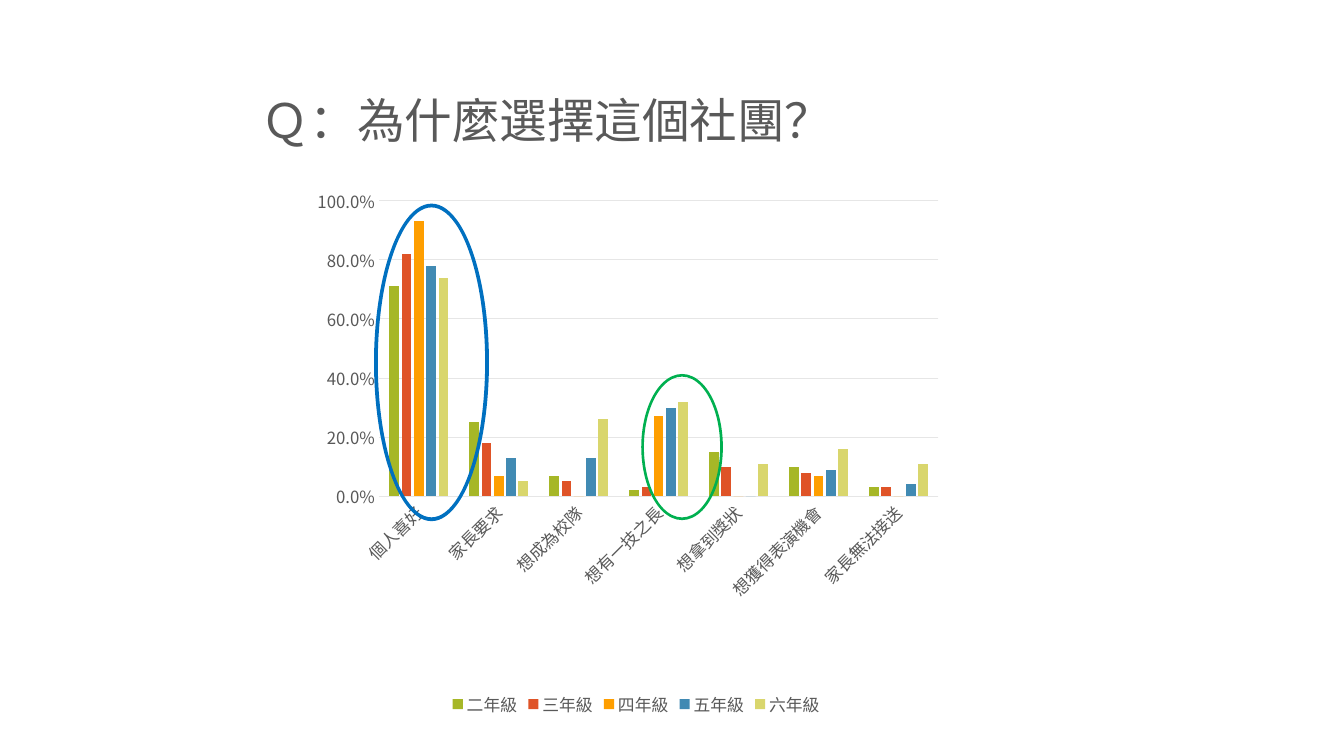
from lxml.etree import SubElement
from pptx import Presentation
from pptx.chart.data import CategoryChartData
from pptx.dml.color import RGBColor
from pptx.enum.chart import XL_CHART_TYPE as ChartType, XL_LEGEND_POSITION as LegendPosition
from pptx.enum.chart import XL_TICK_MARK as TickMark
from pptx.enum.shapes import MSO_SHAPE as Shape
from pptx.enum.text import MSO_ANCHOR as Anchor
from pptx.oxml.ns import qn
from pptx.util import Inches, Pt

COLORS = {
    "text": "595959", "grid": "E6E6E6", "blue": "0070C0", "green": "00B050",
    "二年級": "A6B727", "三年級": "DF5327", "四年級": "FE9E00",
    "五年級": "418AB3", "六年級": "D9D66D",
}
CATEGORIES = ["個人喜好", "家長要求", "想成為校隊", "想有一技之長",
              "想拿到獎狀", "想獲得表演機會", "家長無法接送"]
GRADES = {
    "二年級": [0.71, 0.25, 0.07, 0.02, 0.15, 0.1, 0.03],
    "三年級": [0.82, 0.18, 0.05, 0.03, 0.1, 0.08, 0.03],
    "四年級": [0.93, 0.07, 0, 0.27, 0, 0.07, 0],
    "五年級": [0.78, 0.13, 0.13, 0.3, 0, 0.09, 0.04],
    "六年級": [0.74, 0.05, 0.26, 0.32, 0.11, 0.16, 0.11],
}
PLOT_LAYOUT = {"layoutTarget": "inner", "xMode": "edge", "yMode": "edge",
               "x": 0.1, "y": 0.05, "w": 0.87, "h": 0.54}


class SlideBuilder:
    """Holds the style and the current slide, and adds each kind of element."""

    typeface = "Noto Sans CJK SC"

    def __init__(self, slide):
        self.slide = slide

    def color(self, name):
        return RGBColor.from_string(COLORS[name])

    def apply(self, target, values):
        for name, value in values.items():
            setattr(target, name, value)

    def style_font(self, font, size):
        self.apply(font, {"size": Pt(size), "bold": False, "name": self.typeface})
        font.fill.solid()
        font.fill.fore_color.rgb = self.color("text")

    def set_east_asian(self, element):
        for latin in element.findall(".//" + qn("a:latin")):
            east_asian = latin.makeelement(qn("a:ea"), {"typeface": self.typeface})
            latin.addnext(east_asian)

    def style_line(self, line):
        line.width = Pt(0.75)
        line.color.rgb = self.color("grid")

    def title(self, text, box):
        shape = self.slide.shapes.add_textbox(*map(Inches, box))
        frame = shape.text_frame
        self.apply(frame, {"word_wrap": True, "vertical_anchor": Anchor.BOTTOM})
        paragraph = frame.paragraphs[0]
        paragraph.line_spacing = 0.9
        run = paragraph.add_run()
        run.text = text
        self.style_font(run.font, 34)
        self.set_east_asian(shape.element)

    def column_chart(self, categories, grades, box):
        data = CategoryChartData(number_format="0.0%")
        data.categories = categories
        for grade, values in grades.items():
            data.add_series(grade, values)
        chart = self.slide.shapes.add_chart(
            ChartType.COLUMN_CLUSTERED, *map(Inches, box), data).chart
        self.apply(chart, {"has_title": False, "has_legend": True})
        self.apply(chart.legend, {"position": LegendPosition.BOTTOM, "include_in_layout": False})
        plot = chart.plots[0]
        self.apply(plot, {"gap_width": 219, "overlap": -27, "vary_by_categories": False})
        for series in plot.series:
            series.format.fill.solid()
            series.format.fill.fore_color.rgb = self.color(series.name)
        self.axes(chart)
        for owner in (chart, chart.legend, chart.category_axis.tick_labels,
                      chart.value_axis.tick_labels):
            self.style_font(owner.font, 12)
        self.set_east_asian(chart.element)
        chart.element.find(".//" + qn("c:catAx")).find(
            ".//" + qn("a:bodyPr")).set("rot", "-2700000")
        self.plot_layout(chart)

    def axes(self, chart):
        ticks = {"major_tick_mark": TickMark.NONE, "minor_tick_mark": TickMark.NONE}
        category_axis, value_axis = chart.category_axis, chart.value_axis
        self.apply(category_axis, ticks)
        self.style_line(category_axis.format.line)
        self.apply(value_axis, ticks | {
            "minimum_scale": 0, "maximum_scale": 1, "major_unit": 0.2,
            "has_major_gridlines": True})
        self.apply(value_axis.tick_labels, {
            "number_format": "0.0%", "number_format_is_linked": False})
        value_axis.format.line.fill.background()
        self.style_line(value_axis.major_gridlines.format.line)

    def plot_layout(self, chart):
        plot_area = chart.element.find(".//" + qn("c:plotArea"))
        for layout in plot_area.findall(qn("c:layout")):
            plot_area.remove(layout)
        layout = plot_area.makeelement(qn("c:layout"), {})
        plot_area.insert(0, layout)
        manual = SubElement(layout, qn("c:manualLayout"))
        for name, value in PLOT_LAYOUT.items():
            SubElement(manual, qn("c:" + name)).set("val", str(value))

    def ring(self, color, box):
        shape = self.slide.shapes.add_shape(Shape.DONUT, *map(Inches, box))
        shape.adjustments[0] = 0.033
        shape.shadow.inherit = False
        shape.fill.solid()
        shape.fill.fore_color.rgb = self.color(color)
        shape.line.fill.background()


def main():
    presentation = Presentation()
    presentation.slide_width = Inches(13.33)
    presentation.slide_height = Inches(7.5)
    builder = SlideBuilder(presentation.slides.add_slide(presentation.slide_layouts[6]))
    builder.title("Ｑ：為什麼選擇這個社團？", (2.5, 0.22, 10.83, 1.31))
    builder.column_chart(CATEGORIES, GRADES, (3.12, 1.72, 6.38, 5.43))
    builder.ring("blue", (3.71, 2.02, 1.14, 3.15))
    builder.ring("green", (6.36, 3.71, 0.81, 1.45))
    presentation.save("out.pptx")


if __name__ == "__main__":
    main()
